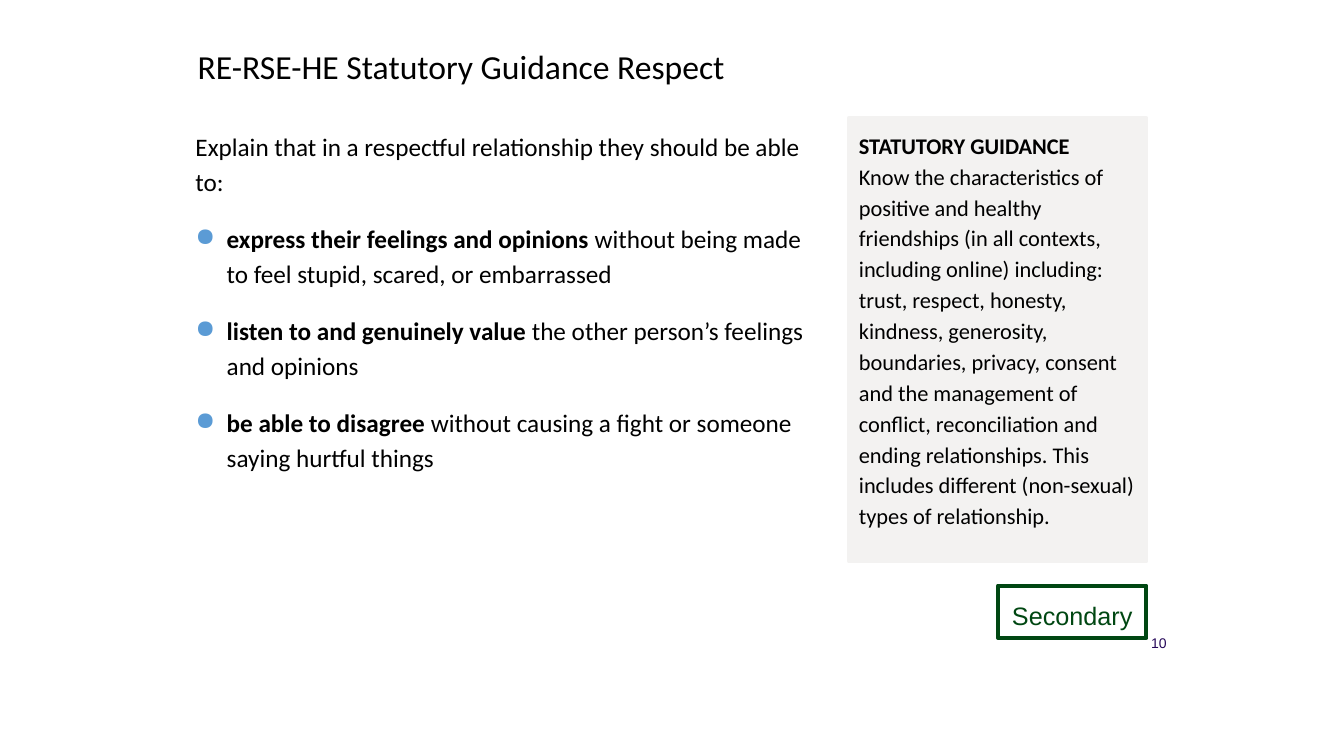
from dataclasses import dataclass

from lxml import etree
from pptx import Presentation
from pptx.dml.color import RGBColor
from pptx.enum.shapes import MSO_SHAPE
from pptx.enum.text import MSO_ANCHOR, MSO_AUTO_SIZE, PP_ALIGN
from pptx.oxml.ns import qn
from pptx.util import Emu, Pt

PX = 9144  # EMU per px, 100 px to the inch
BLACK = RGBColor(0x00, 0x00, 0x00)
PANEL_GREY = RGBColor(0xF3, 0xF2, 0xF1)
TAG_GREEN = RGBColor(0x00, 0x47, 0x12)
NUMBER_PURPLE = RGBColor(0x26, 0x08, 0x59)
BULLET_BLUE = RGBColor(0x5B, 0x9B, 0xD5)
RECTANGLE = MSO_SHAPE.RECTANGLE
TOP, MIDDLE = MSO_ANCHOR.TOP, MSO_ANCHOR.MIDDLE
LEFT, CENTER, RIGHT = PP_ALIGN.LEFT, PP_ALIGN.CENTER, PP_ALIGN.RIGHT
NO_FIT = MSO_AUTO_SIZE.NONE

INSET = 10
INDENT = 31
LINE_SPACING = 1.15


@dataclass
class Box:
    left: int
    top: int
    width: int
    height: int

    def emu(self) -> list[Emu]:
        return [Emu(v * PX) for v in (self.left, self.top, self.width, self.height)]


@dataclass
class Style:
    size: int
    font: str = "Calibri"
    color: RGBColor = BLACK
    align: PP_ALIGN = LEFT


@dataclass
class Bullet:
    strong: str
    rest: str


TITLE_STYLE = Style(24)
BODY_STYLE = Style(18)
PANEL_STYLE = Style(16)
TAG_STYLE = Style(18, "Arial", TAG_GREEN, CENTER)
NUMBER_STYLE = Style(10, "Arial", NUMBER_PURPLE, RIGHT)

INTRO = "Explain that in a respectful relationship they should be able to:"
BULLETS = [
    Bullet("express their feelings and opinions",
           " without being made to feel stupid, scared, or embarrassed"),
    Bullet("listen to and genuinely value", " the other person’s feelings and opinions"),
    Bullet("be able to disagree ", "without causing a fight or someone saying hurtful things"),
]
GUIDANCE = (
    "Know the characteristics of positive and healthy friendships (in all contexts, "
    "including online) including: trust, respect, honesty, kindness, generosity, "
    "boundaries, privacy, consent and the management of conflict, reconciliation and "
    "ending relationships. This includes different (non-sexual) types of relationship."
)


def set_frame(tf, anchor=TOP) -> None:
    tf.word_wrap = True
    tf.auto_size = NO_FIT
    tf.vertical_anchor = anchor
    tf.margin_left = tf.margin_right = tf.margin_top = tf.margin_bottom = Emu(INSET * PX)


def add_run(p, text: str, style: Style, bold: bool = False) -> None:
    r = p.add_run()
    r.text = text
    r.font.name = style.font
    r.font.size = Pt(style.size)
    r.font.bold = bold
    r.font.color.rgb = style.color
    p.alignment = style.align


def add_bullet(p) -> None:
    pPr = p._p.get_or_add_pPr()
    pPr.set("marL", str(INDENT * PX))
    pPr.set("indent", str(-INDENT * PX))
    color = etree.SubElement(pPr, qn("a:buClr"))
    etree.SubElement(color, qn("a:srgbClr")).set("val", str(BULLET_BLUE))
    etree.SubElement(pPr, qn("a:buChar")).set("char", "●")


def add_text_box(slide, box: Box, anchor=TOP):
    tf = slide.shapes.add_textbox(*box.emu()).text_frame
    set_frame(tf, anchor)
    return tf


def add_frame_box(slide, box: Box, line: RGBColor, fill: RGBColor | None = None):
    s = slide.shapes.add_shape(RECTANGLE, *box.emu())
    s.shadow.inherit = False
    if fill is None:
        s.fill.background()
    else:
        s.fill.solid()
        s.fill.fore_color.rgb = fill
    s.line.color.rgb = line
    s.line.width = Pt(3)
    etree.SubElement(s.line._get_or_add_ln(), qn("a:round"))
    set_frame(s.text_frame)
    s.text_frame.paragraphs[0].line_spacing = LINE_SPACING
    return s.text_frame


def main() -> None:
    prs = Presentation()
    prs.slide_width, prs.slide_height = Emu(1333 * PX), Emu(750 * PX)
    slide = prs.slides.add_slide(prs.slide_layouts[5])

    # Title
    title = slide.shapes.title
    title.left, title.top, title.width, title.height = Box(186, 36, 641, 63).emu()
    set_frame(title.text_frame)
    add_run(title.text_frame.paragraphs[0], "RE-RSE-HE Statutory Guidance Respect", TITLE_STYLE)

    # Introduction and bullets
    tf = add_text_box(slide, Box(184, 116, 641, 401))
    p = tf.paragraphs[0]
    p.line_spacing = LINE_SPACING
    add_run(p, INTRO, BODY_STYLE)
    for bullet in BULLETS:
        p = tf.add_paragraph()
        p.line_spacing = LINE_SPACING
        p.space_before = Pt(16)
        add_bullet(p)
        add_run(p, bullet.strong, BODY_STYLE, bold=True)
        add_run(p, bullet.rest, BODY_STYLE)

    # Guidance panel
    p = add_frame_box(slide, Box(842, 117, 295, 440), PANEL_GREY, PANEL_GREY).paragraphs[0]
    add_run(p, "STATUTORY GUIDANCE", PANEL_STYLE, bold=True)
    p.add_line_break()
    add_run(p, GUIDANCE, PANEL_STYLE)

    # School phase tag
    p = add_frame_box(slide, Box(990, 581, 147, 52), TAG_GREEN).paragraphs[0]
    add_run(p, "Secondary", TAG_STYLE)

    # Page number
    tf = add_text_box(slide, Box(1128, 619, 39, 37), MIDDLE)
    add_run(tf.paragraphs[0], "10", NUMBER_STYLE)

    prs.save("out.pptx")


if __name__ == "__main__":
    main()
